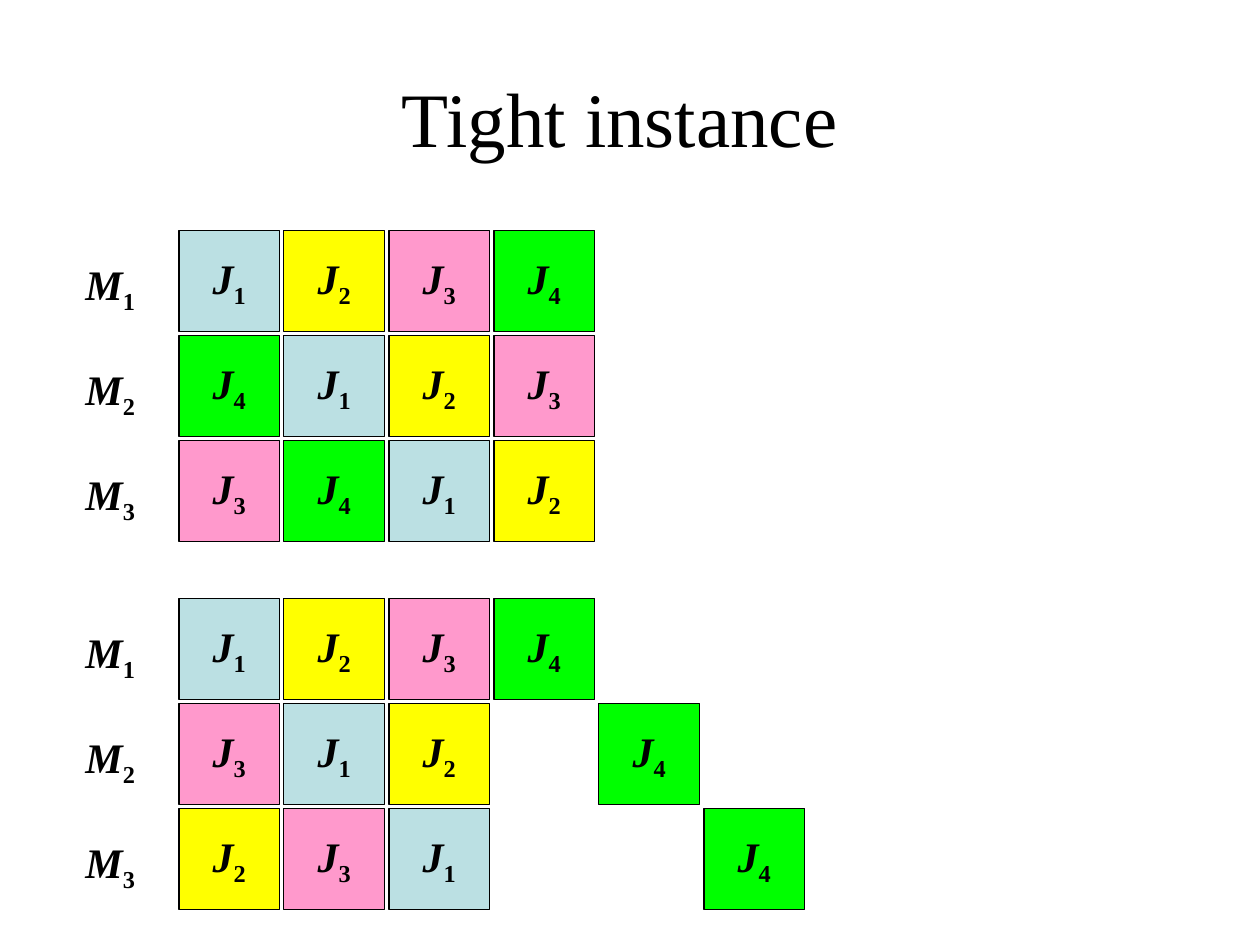
from pptx import Presentation
from pptx.dml.color import RGBColor
from pptx.enum.shapes import MSO_SHAPE
from pptx.enum.text import MSO_ANCHOR, MSO_AUTO_SIZE, PP_ALIGN
from pptx.util import Inches, Pt

FONT = "Times New Roman"
COLORS = {
    "text": "000000",
    "line": "000000",
    "1": "BBE0E3",
    "2": "FFFF00",
    "3": "FF99CC",
    "4": "00FF00",
}

# Each string is one machine's timeline: a job number per slot, a space when idle.
SCHEDULES = [
    (1.83, ["1234", "4123", "3412"]),
    (4.75, ["1234", "312 4", "231  4"]),
]
LABEL_LEFT = 0.58
LABEL_DROP = 0.17
GRID_LEFT = 1.42
PITCH = 5 / 6
JOB_SIZE = 0.8


def color(name):
    return RGBColor.from_string(COLORS[name])


def add_run(paragraph, text, size, bold=False, italic=False):
    run = paragraph.add_run()
    run.text = text
    font = run.font
    font.name = FONT
    font.size = Pt(size)
    font.bold = bold
    font.italic = italic
    font.color.rgb = color("text")
    return run


def add_symbol(paragraph, letter, index):
    """Add a bold italic letter with an upright subscript."""
    add_run(paragraph, letter, 24, bold=True, italic=True)
    subscript = add_run(paragraph, index, 24, bold=True)
    subscript.font._element.set("baseline", "-25000")


def add_title(slide, text):
    title = slide.shapes.title
    title.left, title.top = Inches(0.42), Inches(0.3)
    title.width, title.height = Inches(9), Inches(1.25)
    title.text_frame.vertical_anchor = MSO_ANCHOR.MIDDLE
    paragraph = title.text_frame.paragraphs[0]
    paragraph.alignment = PP_ALIGN.CENTER
    add_run(paragraph, text, 44)


def add_machine_label(slide, top, index):
    label = slide.shapes.add_textbox(
        Inches(LABEL_LEFT), Inches(top), Inches(0.61), Inches(0.5))
    frame = label.text_frame
    frame.word_wrap = False
    frame.auto_size = MSO_AUTO_SIZE.SHAPE_TO_FIT_TEXT
    add_symbol(frame.paragraphs[0], "M", index)


def add_job(slide, left, top, index):
    job = slide.shapes.add_shape(
        MSO_SHAPE.RECTANGLE, Inches(left), Inches(top),
        Inches(JOB_SIZE), Inches(JOB_SIZE))
    job.shadow.inherit = False
    job.fill.solid()
    job.fill.fore_color.rgb = color(index)
    job.line.color.rgb = color("line")
    job.line.width = Pt(0.75)
    frame = job.text_frame
    frame.word_wrap = False
    frame.vertical_anchor = MSO_ANCHOR.MIDDLE
    paragraph = frame.paragraphs[0]
    paragraph.alignment = PP_ALIGN.CENTER
    add_symbol(paragraph, "J", index)


def add_schedule(slide, top, machines):
    for row, jobs in enumerate(machines):
        row_top = top + row * PITCH
        add_machine_label(slide, row_top + LABEL_DROP, str(row + 1))
        for slot, index in enumerate(jobs):
            if index != " ":
                add_job(slide, GRID_LEFT + slot * PITCH, row_top, index)


def main():
    presentation = Presentation()
    presentation.slide_width = Inches(10)
    presentation.slide_height = Inches(7.5)
    slide = presentation.slides.add_slide(presentation.slide_layouts[5])
    add_title(slide, "Tight instance")
    for top, machines in SCHEDULES:
        add_schedule(slide, top, machines)
    presentation.save("out.pptx")


if __name__ == "__main__":
    main()
